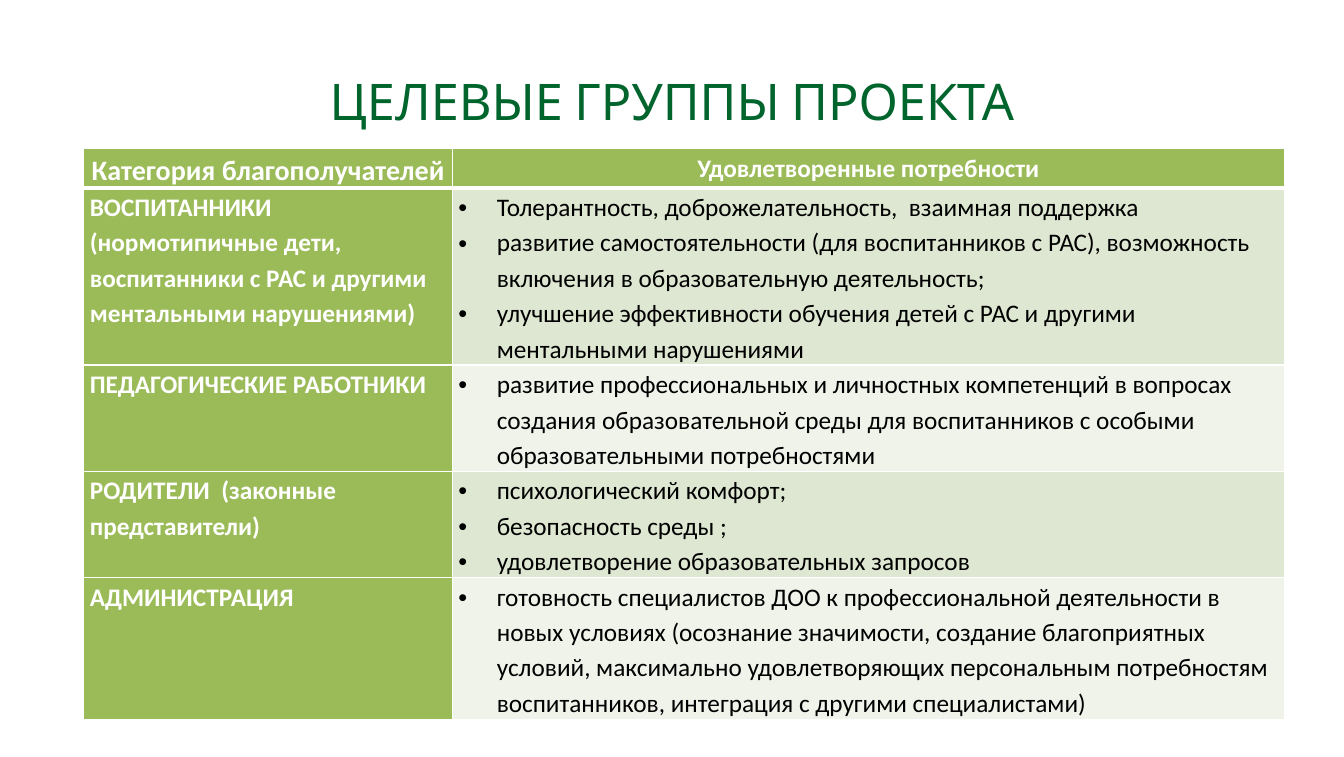
from lxml import etree
from pptx import Presentation
from pptx.dml.color import RGBColor
from pptx.enum.text import MSO_ANCHOR, PP_ALIGN
from pptx.oxml.ns import qn
from pptx.util import Inches, Pt

CENTER, LEFT = PP_ALIGN.CENTER, PP_ALIGN.LEFT
MIDDLE, TOP = MSO_ANCHOR.MIDDLE, MSO_ANCHOR.TOP
DARK_GREEN = RGBColor(0x00, 0x64, 0x2D)
GREEN = RGBColor(0x9B, 0xBB, 0x59)
BANDS = [RGBColor(0xDE, 0xE7, 0xD1), RGBColor(0xEF, 0xF3, 0xEA)]
WHITE = RGBColor(0xFF, 0xFF, 0xFF)
BLACK = RGBColor(0x00, 0x00, 0x00)

COLUMN_WIDTHS = [3.65, 8.24]
ROW_HEIGHTS = [0.39, 1.71, 1.04, 1.03, 1.38]
HEADINGS = ["Категория благополучателей", "Удовлетворенные потребности"]
GROUPS = [
    ("ВОСПИТАННИКИ (нормотипичные дети, воспитанники с РАС и другими ментальными нарушениями)",
     ["Толерантность, доброжелательность,  взаимная поддержка",
      "развитие самостоятельности (для воспитанников с РАС), возможность включения в образовательную деятельность;",
      "улучшение эффективности обучения детей с РАС и другими ментальными нарушениями"]),
    ("ПЕДАГОГИЧЕСКИЕ РАБОТНИКИ",
     ["развитие профессиональных и личностных компетенций в вопросах создания образовательной среды "
      "для воспитанников с особыми образовательными потребностями"]),
    ("РОДИТЕЛИ  (законные представители)",
     ["психологический комфорт;",
      "безопасность среды ;",
      "удовлетворение образовательных запросов"]),
    ("АДМИНИСТРАЦИЯ",
     ["готовность специалистов ДОО к профессиональной деятельности в новых условиях (осознание значимости, "
      "создание благоприятных условий, максимально удовлетворяющих персональным потребностям воспитанников, "
      "интеграция с другими специалистами)"]),
]


def set_borders(cell, bottom_width):
    properties = cell._tc.get_or_add_tcPr()
    widths = {"a:lnL": 1, "a:lnR": 1, "a:lnT": 1, "a:lnB": bottom_width}
    for position, (side, width) in enumerate(widths.items()):
        border = etree.Element(qn(side), w=str(Pt(width)))
        fill = etree.SubElement(border, qn("a:solidFill"))
        etree.SubElement(fill, qn("a:srgbClr"), val=str(WHITE))
        properties.insert(position, border)


def fill_cell(cell, lines, background, color, size=18, bold=True,
              align=LEFT, bulleted=False, bottom_width=1):
    cell.fill.solid()
    cell.fill.fore_color.rgb = background
    cell.margin_left = cell.margin_right = Inches(0.06)
    cell.margin_top = cell.margin_bottom = 0
    cell.vertical_anchor = TOP
    set_borders(cell, bottom_width)
    cell.text_frame.text = "\n".join(lines)
    for paragraph in cell.text_frame.paragraphs:
        if bulleted:
            properties = paragraph._p.get_or_add_pPr()
            properties.set("marL", str(Inches(0.38)))
            properties.set("indent", str(-Inches(0.38)))
            etree.SubElement(properties, qn("a:buFont"), typeface="Arial")
            etree.SubElement(properties, qn("a:buChar"), char="•")
        paragraph.alignment = align
        paragraph.line_spacing = 1.15
        font = paragraph.runs[0].font
        font.name = "Calibri"
        font.size = Pt(size)
        font.bold = bold
        font.color.rgb = color


presentation = Presentation()
presentation.slide_width = Inches(13.31)
presentation.slide_height = Inches(7.5)
slide = presentation.slides.add_slide(presentation.slide_layouts[5])

title = slide.shapes.title
title.left, title.top = 0, Inches(0.76)
title.width, title.height = presentation.slide_width, Inches(0.55)
title_frame = title.text_frame
title_frame.text = "ЦЕЛЕВЫЕ ГРУППЫ ПРОЕКТА"
title_frame.margin_left = title_frame.margin_right = 0
title_frame.margin_top = title_frame.margin_bottom = 0
title_frame.vertical_anchor = MIDDLE
heading = title_frame.paragraphs[0]
heading.alignment = CENTER
heading.line_spacing = 0.9
heading.runs[0].font.name = "Cabin"
heading.runs[0].font.size = Pt(36)
heading.runs[0].font.color.rgb = DARK_GREEN

needs_table = slide.shapes.add_table(
    len(ROW_HEIGHTS), len(COLUMN_WIDTHS), Inches(0.83), Inches(1.47),
    Inches(sum(COLUMN_WIDTHS)), Inches(sum(ROW_HEIGHTS))).table
for column, width in zip(needs_table.columns, COLUMN_WIDTHS):
    column.width = Inches(width)
for row, height in zip(needs_table.rows, ROW_HEIGHTS):
    row.height = Inches(height)

for index, (text, size) in enumerate(zip(HEADINGS, [20, 18])):
    fill_cell(needs_table.cell(0, index), [text], GREEN, WHITE, size=size,
              align=CENTER, bottom_width=3)

for index, (group, needs) in enumerate(GROUPS):
    fill_cell(needs_table.cell(index + 1, 0), [group], GREEN, WHITE)
    fill_cell(needs_table.cell(index + 1, 1), needs, BANDS[index % 2], BLACK,
              bold=False, bulleted=True)

presentation.save("out.pptx")
